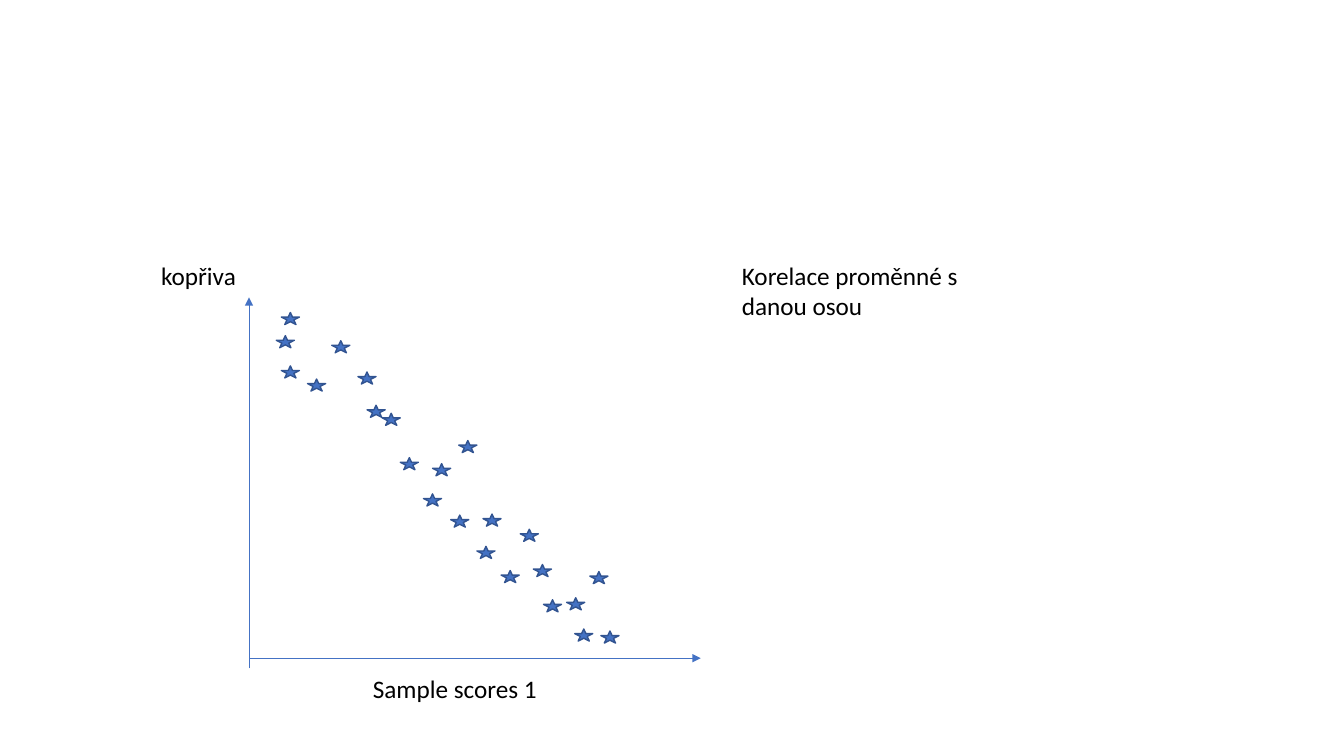
from dataclasses import dataclass

from lxml import etree
from pptx import Presentation
from pptx import util as u
from pptx.dml.color import RGBColor
from pptx.enum import shapes, text
from pptx.oxml.ns import qn


@dataclass(frozen=True)
class Theme:
    accent: RGBColor = RGBColor(0x44, 0x72, 0xC4)
    outline: RGBColor = RGBColor(0x32, 0x54, 0x91)
    ink: RGBColor = RGBColor(0, 0, 0)
    font: str = "Calibri"
    label_size: int = 18
    axis_width: float = 0.5
    star_width: float = 1


THEME = Theme()
COLUMNS, ROWS = 13.33, 7.5
CELL = u.Inches(1)
ORIGIN_X, ORIGIN_Y = 2.47, 6.53
STAR_SIZE = (0.18, 0.12)
SAMPLES = [
    (2.79, 3.63), (2.79, 3.1), (5.85, 5.67), (4.97, 5.66), (2.74, 3.33),
    (3.05, 3.76), (3.29, 3.38), (3.55, 3.69), (3.64, 4.02), (3.79, 4.1),
    (3.97, 4.54), (4.55, 4.37), (4.29, 4.6), (4.2, 4.9), (4.47, 5.11),
    (4.79, 5.1), (4.73, 5.42), (5.16, 5.25), (5.29, 5.6), (5.39, 5.95),
    (5.62, 5.93), (5.7, 6.24), (5.96, 6.26),
]


def grid(*cells):
    return [u.Emu(round(cell * CELL)) for cell in cells]


def apply_format(target, values):
    for name, value in values.items():
        setattr(target, name, value)


def add_axis(page, start, end):
    axis = page.shapes.add_connector(
        shapes.MSO_CONNECTOR.STRAIGHT, *grid(*start, *end))
    axis.line.color.rgb = THEME.accent
    axis.line.width = u.Pt(THEME.axis_width)
    etree.SubElement(axis.line._get_or_add_ln(), qn("a:tailEnd"), type="triangle")
    etree.SubElement(axis._element.spPr, qn("a:effectLst"))


def add_label(page, words, *place):
    box = page.shapes.add_textbox(*grid(*place))
    apply_format(box.text_frame, {
        "word_wrap": True,
        "auto_size": text.MSO_AUTO_SIZE.SHAPE_TO_FIT_TEXT,
    })
    span = box.text_frame.paragraphs[0].add_run()
    span.text = words
    apply_format(span.font, {"name": THEME.font, "size": u.Pt(THEME.label_size)})
    span.font.color.rgb = THEME.ink


def add_star(page, left, top):
    star = page.shapes.add_shape(
        shapes.MSO_SHAPE.STAR_5_POINT, *grid(left, top, *STAR_SIZE))
    star.shadow.inherit = False
    star.fill.solid()
    star.fill.fore_color.rgb = THEME.accent
    star.line.color.rgb = THEME.outline
    star.line.width = u.Pt(THEME.star_width)


def main():
    deck = Presentation()
    deck.slide_width, deck.slide_height = grid(COLUMNS, ROWS)
    page = deck.slides.add_slide(deck.slide_layouts.get_by_name("Blank"))

    add_axis(page, (ORIGIN_X, ORIGIN_Y), (6.95, ORIGIN_Y))
    add_label(page, "Sample scores 1", 3.6, 6.63, 2.23, 0.4)
    add_axis(page, (ORIGIN_X, ORIGIN_Y + 0.1), (ORIGIN_X, 2.95))
    add_label(page, "kopřiva", 1.5, 2.53, 1.46, 0.4)
    for left, top in SAMPLES:
        add_star(page, left, top)
    add_label(page, "Korelace proměnné s danou osou", 7.26, 2.53, 2.94, 0.71)

    deck.save("out.pptx")


if __name__ == "__main__":
    main()
